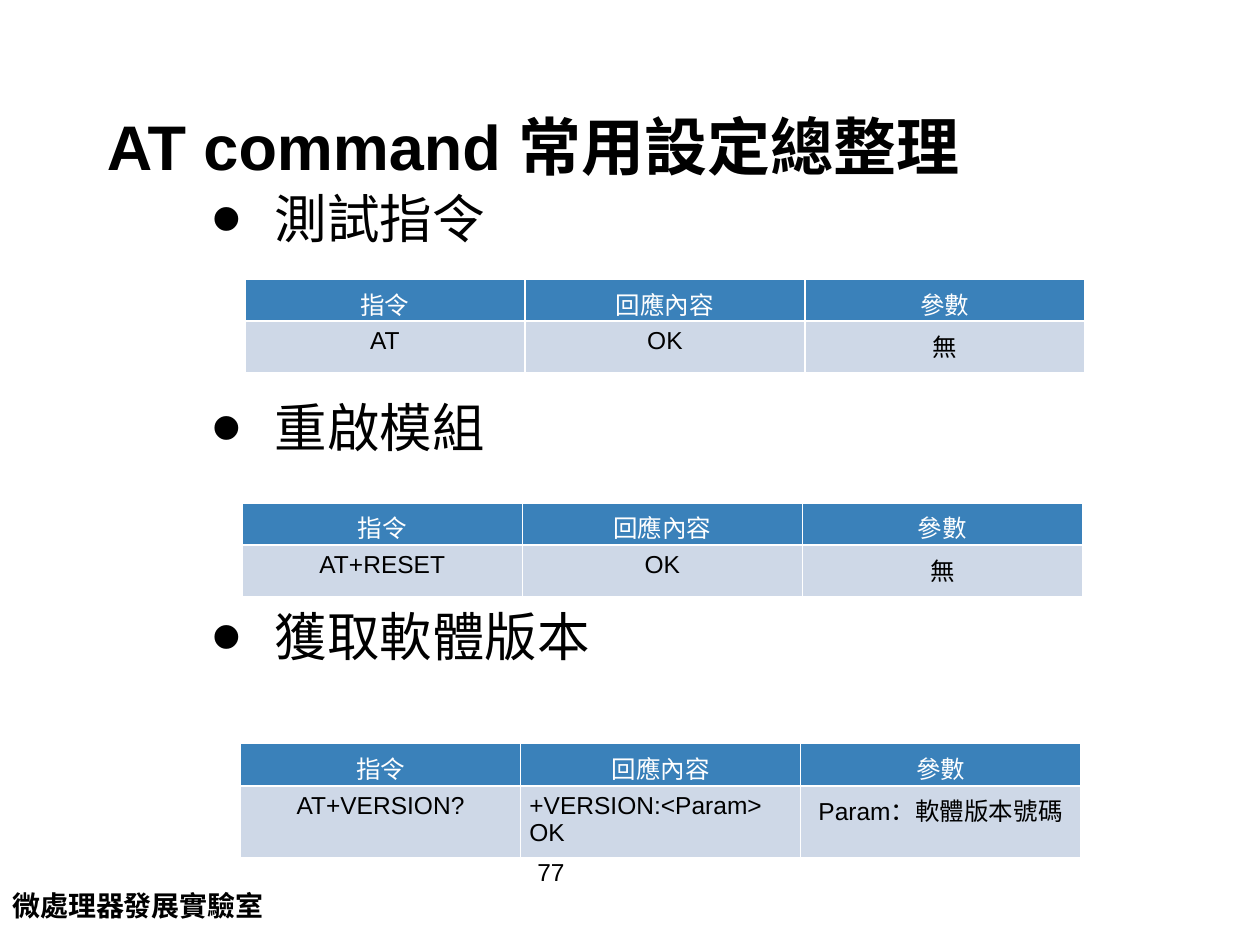
from dataclasses import dataclass
from typing import Any

from lxml import etree
from pptx import Presentation
from pptx import util as u
from pptx.dml.color import RGBColor
from pptx.enum import text
from pptx.oxml import ns

BLACK = RGBColor(0x00, 0x00, 0x00)
WHITE = RGBColor(0xFF, 0xFF, 0xFF)
HEADER_BLUE = RGBColor(0x3A, 0x81, 0xBA)
ROW_BLUE = RGBColor(0xCE, 0xD8, 0xE7)

HEADER = ("指令", "回應內容", "參數")
# heading, table left, table top, command, reply lines, parameter
COMMANDS = (
    ("測試指令", 140, 159.5, "AT", ["OK"], "無"),
    ("重啟模組", 138.5, 287.5, "AT+RESET", ["OK"], "無"),
    ("獲取軟體版本", 137.5, 425, "AT+VERSION?", ["+VERSION:<Param>", "OK"], "Param：軟體版本號碼"),
)


@dataclass
class SlideBuilder:
    page: Any
    font: str = "Arial"
    cell_size: float = 14
    column_width: float = 160
    row_heights: tuple = (0, 29.5)

    def span(self, para, words, size, color=BLACK, bold=False):
        span = para.add_run()
        span.text = words
        span.font.name = self.font
        span.font.size = u.Pt(size)
        span.font.bold = bold
        span.font.color.rgb = color

    def box(self, left, top, width, height, inset=3.6):
        """Add an empty wrapping text box and return its text frame."""
        box = self.page.shapes.add_textbox(*map(u.Pt, (left, top, width, height)))
        frame = box.text_frame
        frame.word_wrap = True
        frame.margin_left = frame.margin_right = u.Pt(7.2)
        frame.margin_top = frame.margin_bottom = u.Pt(inset)
        return frame

    def label(self, words, size, place, bold=False):
        self.span(self.box(*place).paragraphs[0], words, size, bold=bold)

    def title(self, words):
        frame = self.box(36, 21.6, 648, 90, inset=7.2)
        frame.vertical_anchor = text.MSO_ANCHOR.BOTTOM
        para = frame.paragraphs[0]
        para._p.get_or_add_pPr().set("indent", str(u.Pt(18)))
        self.span(para, words, 36, bold=True)

    def bullets(self, headings, gap):
        """Add bulleted headings, with room for a table between them."""
        frame = self.box(109.5, 103, 570, 409, inset=7.2)
        for index, heading in enumerate(headings):
            para = frame.add_paragraph() if index else frame.paragraphs[0]
            para.line_spacing = 0.9
            para.space_before = u.Pt(gap if index else 6)
            props = para._p.get_or_add_pPr()
            props.set("marL", str(u.Pt(40.5)))
            props.set("indent", str(u.Pt(-36)))
            color = etree.SubElement(props, ns.qn("a:buClr"))
            etree.SubElement(color, ns.qn("a:srgbClr"), val=str(BLACK))
            etree.SubElement(props, ns.qn("a:buSzPct"), val="167000")
            etree.SubElement(props, ns.qn("a:buFont"), typeface=self.font)
            etree.SubElement(props, ns.qn("a:buChar"), char="•")
            self.span(para, heading, 30)

    def borders(self, cell):
        props = cell._tc.get_or_add_tcPr()
        for index, side in enumerate(("a:lnL", "a:lnR", "a:lnT", "a:lnB")):
            line = etree.Element(ns.qn(side), w=str(u.Pt(1)))
            fill = etree.SubElement(line, ns.qn("a:solidFill"))
            etree.SubElement(fill, ns.qn("a:srgbClr"), val=str(WHITE))
            props.insert(index, line)

    def cell(self, cell, lines, fill, color):
        cell.fill.solid()
        cell.fill.fore_color.rgb = fill
        self.borders(cell)
        cell.margin_left = cell.margin_right = u.Pt(5)
        cell.margin_top = cell.margin_bottom = u.Pt(3.6)
        para = cell.text_frame.paragraphs[0]
        one_line = len(lines) == 1
        para.alignment = text.PP_ALIGN.CENTER if one_line else text.PP_ALIGN.LEFT
        for index, line in enumerate(lines):
            if index:
                para.add_line_break()
            self.span(para, line, self.cell_size, color)

    def table(self, left, top, values):
        """Add a header row and one row of values, each a list of lines."""
        rows = (
            ([[name] for name in HEADER], HEADER_BLUE, WHITE),
            (values, ROW_BLUE, BLACK),
        )
        count = len(HEADER)
        size = (count * self.column_width, sum(self.row_heights))
        table = self.page.shapes.add_table(
            len(rows), count, *map(u.Pt, (left, top, *size))
        ).table
        for column in table.columns:
            column.width = u.Pt(self.column_width)
        for r, (cells, fill, color) in enumerate(rows):
            table.rows[r].height = u.Pt(self.row_heights[r])
            for c, lines in enumerate(cells):
                self.cell(table.cell(r, c), lines, fill, color)


def main():
    deck = Presentation()
    deck.slide_width, deck.slide_height = u.Pt(720), u.Pt(540)
    builder = SlideBuilder(deck.slides.add_slide(deck.slide_layouts[6]))
    builder.title("AT command 常用設定總整理")
    builder.bullets([command[0] for command in COMMANDS], gap=87.2)
    builder.label("77", 14, (300, 486, 144, 28.8))
    for _, left, top, command, reply, parameter in COMMANDS:
        builder.table(left, top, ([command], reply, [parameter]))
    builder.label("微處理器發展實驗室", 16, (0, 504, 720, 37.5), bold=True)
    deck.save("out.pptx")


if __name__ == "__main__":
    main()
